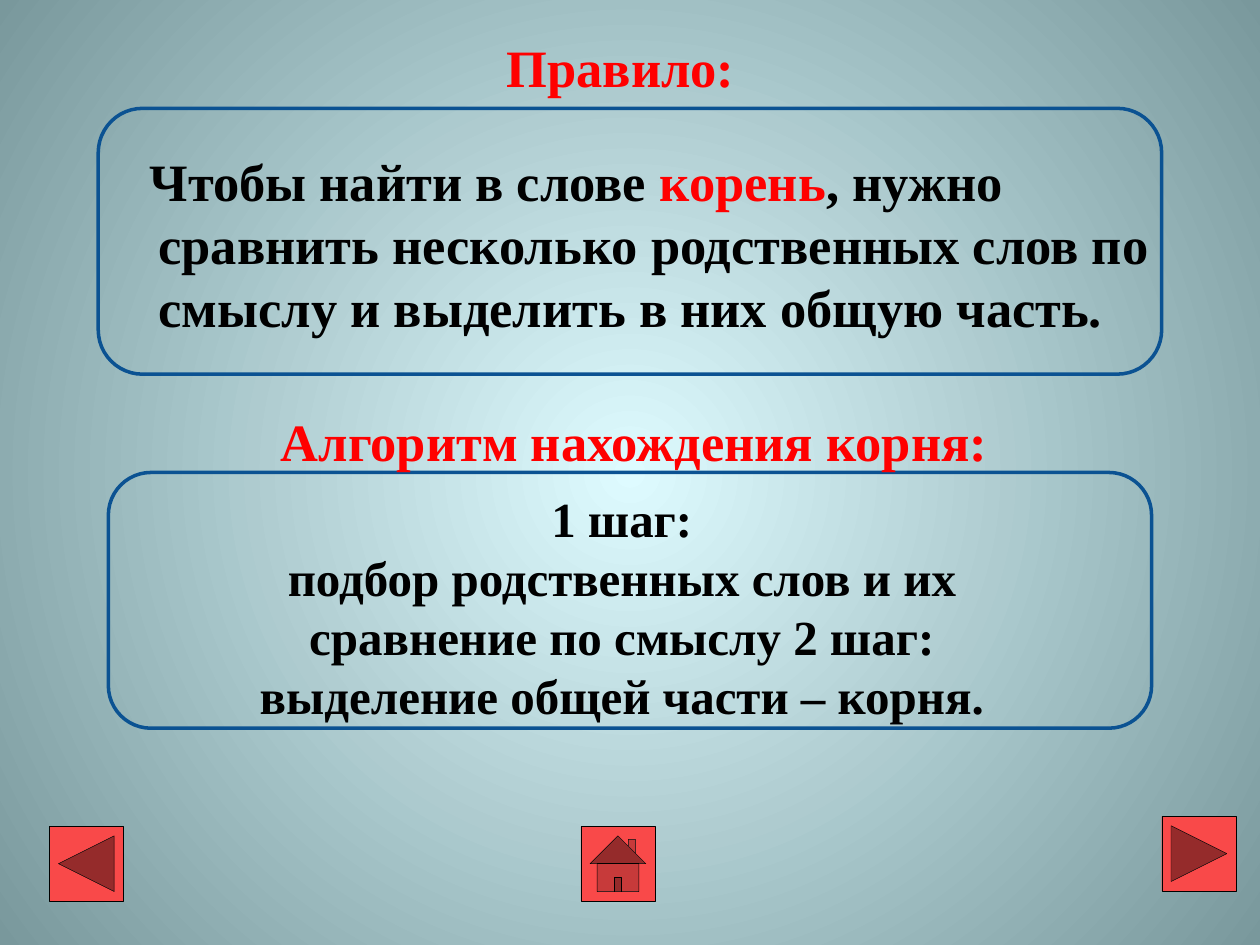
from dataclasses import dataclass

from lxml import etree
from pptx import Presentation
from pptx import util as u
from pptx.dml.color import RGBColor
from pptx.enum import shapes, text
from pptx.oxml.ns import qn


@dataclass(frozen=True)
class Theme:
    font: str = "Times New Roman"
    heading_size: int = 30
    step_size: int = 28
    ink: str = "000000"
    accent: str = "FF0000"
    frame: str = "0B5292"
    button: str = "F94949"
    glow: str = "DEFBFF"
    edge: str = "79989C"


def rgb(value):
    return RGBColor.from_string(value)


class SlideBuilder:
    def __init__(self, prs, theme):
        self.theme = theme
        self.s = prs.slides.add_slide(prs.slide_layouts[5])

    def radial_background(self):
        fill = self.s.background.fill
        fill.gradient()
        for stop, color, pos in zip(fill.gradient_stops,
                                    (self.theme.glow, self.theme.edge), (0, 1)):
            stop.color.rgb = rgb(color)
            stop.position = pos
        lin = self.s.background._cSld.find(".//" + qn("a:lin"))
        path = etree.Element(qn("a:path"), path="circle")
        etree.SubElement(path, qn("a:fillToRect"),
                         {side: "50000" for side in "ltrb"})
        lin.getparent().replace(lin, path)

    def shape(self, kind, box, line, width, fill=None):
        sp = self.s.shapes.add_shape(kind, *map(u.Inches, box))
        sp.shadow.inherit = False
        if fill:
            sp.fill.solid()
            sp.fill.fore_color.rgb = rgb(fill)
        else:
            sp.fill.background()
        sp.line.color.rgb = rgb(line)
        sp.line.width = u.Pt(width)

    def frame(self, box):
        self.shape(shapes.MSO_SHAPE.ROUNDED_RECTANGLE, box, self.theme.frame, 2)

    def button(self, kind, left, top):
        self.shape(kind, (left, top, 0.59, 0.59), self.theme.ink, 0.25,
                   self.theme.button)

    def fill_text(self, sp, paragraphs, size, color, align):
        """Each paragraph is a list of (words, own colour or None)."""
        tf = sp.text_frame
        tf.word_wrap = True
        tf.auto_size = text.MSO_AUTO_SIZE.NONE
        tf.vertical_anchor = text.MSO_ANCHOR.TOP
        for i, runs in enumerate(paragraphs):
            p = tf.add_paragraph() if i else tf.paragraphs[0]
            p.alignment = align
            p.font.name = self.theme.font
            p.font.size = u.Pt(size)
            p.font.bold = True
            p.font.color.rgb = rgb(color)
            for words, own_color in runs:
                r = p.add_run()
                r.text = words
                if own_color:
                    r.font.color.rgb = rgb(own_color)
        return tf

    def title(self, words, box):
        sp = self.s.shapes.title
        sp.left, sp.top, sp.width, sp.height = map(u.Inches, box)
        self.fill_text(sp, [[(words, None)]], self.theme.heading_size,
                       self.theme.accent, text.PP_ALIGN.CENTER)

    def text_box(self, paragraphs, box, size, color, align=text.PP_ALIGN.CENTER):
        sp = self.s.shapes.add_textbox(*map(u.Inches, box))
        return self.fill_text(sp, paragraphs, size, color, align)


def hanging_indent(p, left, first):
    pPr = p._p.get_or_add_pPr()
    pPr.set("marL", str(u.Inches(left)))
    pPr.set("indent", str(u.Inches(first)))


def main():
    prs = Presentation()
    prs.slide_width, prs.slide_height = u.Inches(10), u.Inches(7.5)
    theme = Theme()
    b = SlideBuilder(prs, theme)

    b.radial_background()
    b.frame((0.78, 0.86, 8.44, 2.11))
    b.frame((0.86, 3.75, 8.28, 2.03))

    b.title("Правило:", (3.38, 0.23, 3.09, 0.61))
    rule = [
        ("Чтобы найти в слове ", None),
        ("корень", theme.accent),
        (", нужно сравнить несколько родственных слов по смыслу "
         "и выделить в них общую часть.", None),
    ]
    tf = b.text_box([rule], (0.78, 1.13, 8.52, 1.72), theme.heading_size,
                    theme.ink, text.PP_ALIGN.LEFT)
    hanging_indent(tf.paragraphs[0], 0.38, -0.07)

    b.text_box([[("Алгоритм нахождения корня:", None)]],
               (0.7, 3.2, 8.67, 0.61), theme.heading_size, theme.accent)
    steps = ("1 шаг:",
             "подбор родственных слов и их сравнение по смыслу 2 шаг:",
             "выделение общей части – корня.")
    b.text_box([[(step, None)] for step in steps],
               (1.45, 3.83, 6.97, 1.99), theme.step_size, theme.ink)

    kinds = shapes.MSO_SHAPE
    b.button(kinds.ACTION_BUTTON_FORWARD_OR_NEXT, 9.22, 6.48)
    b.button(kinds.ACTION_BUTTON_HOME, 4.61, 6.56)
    b.button(kinds.ACTION_BUTTON_BACK_OR_PREVIOUS, 0.39, 6.56)

    prs.save("out.pptx")


if __name__ == "__main__":
    main()
